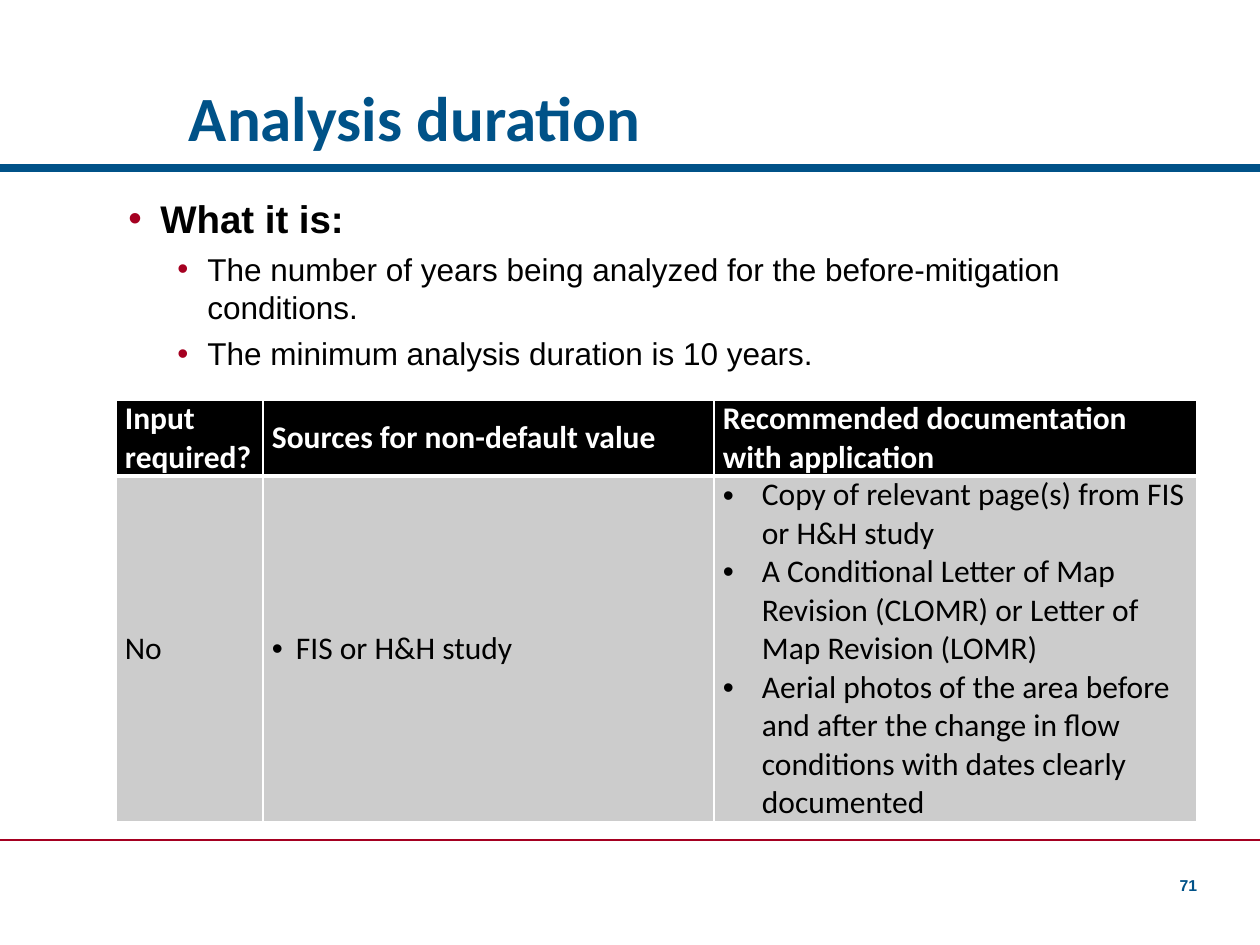
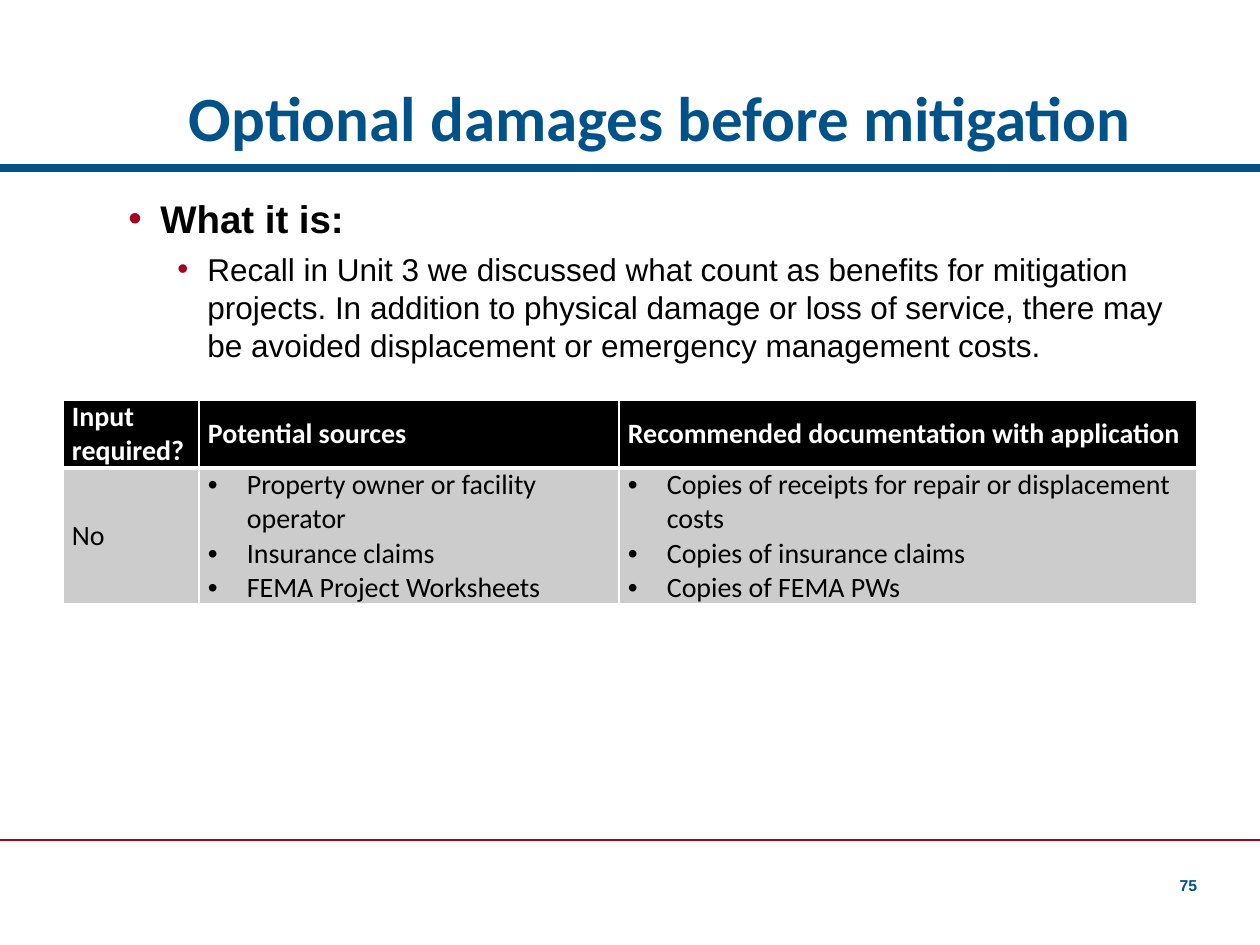
from lxml.etree import SubElement
from pptx import Presentation
from pptx.dml.color import RGBColor
from pptx.enum.shapes import MSO_CONNECTOR
from pptx.enum.text import MSO_ANCHOR, PP_ALIGN
from pptx.oxml.ns import qn
from pptx.util import Emu, Pt

PIXELS_PER_INCH = 126
SLIDE_WIDTH, SLIDE_HEIGHT = 1260, 945
BLUE, RED, BLACK, WHITE, GREY = "005288", "A50021", "000000", "FFFFFF", "CCCCCC"
HEADING_FONT, BODY_FONT = "Calibri", "Arial"
TITLE_BOX = (189, 0, 1008, 161)
BODY_BOX = (116, 189, 1081, 598)
NUMBER_BOX = (1155, 869, 42, 32)
TABLE_TOP = 400
WIDE_INDENT, NARROW_INDENT = 39, 24

SLIDES = [
    {
        "title": "Analysis duration",
        "number": "71",
        "points": [
            "The number of years being analyzed for the before-mitigation conditions.",
            "The minimum analysis duration is 10 years.",
        ],
        "left": 116,
        "columns": [147, 451, 483],
        "rows": [76, 346],
        "size": 18,
        "headers": [
            "Input required?",
            "Sources for non-default value",
            "Recommended documentation with application",
        ],
        "sources": ["FIS or H&H study"],
        "source_indent": NARROW_INDENT,
        "documents": [
            "Copy of relevant page(s) from FIS or H&H study",
            "A Conditional Letter of Map Revision (CLOMR) or Letter of Map Revision (LOMR)",
            "Aerial photos of the area before and after the change in flow conditions "
            "with dates clearly documented",
        ],
    },
    {
        "title": "Optional damages before mitigation",
        "number": "75",
        "points": [
            "Recall in Unit 3 we discussed what count as benefits for mitigation projects. "
            "In addition to physical damage or loss of service, there may be avoided "
            "displacement or emergency management costs.",
        ],
        "left": 63,
        "columns": [136, 420, 578],
        "rows": [68, 136],
        "size": 16,
        "headers": [
            "Input required?",
            "Potential sources",
            "Recommended documentation with application",
        ],
        "sources": [
            "Property owner or facility operator",
            "Insurance claims",
            "FEMA Project Worksheets",
        ],
        "source_indent": WIDE_INDENT,
        "documents": [
            "Copies of receipts for repair or displacement costs",
            "Copies of insurance claims",
            "Copies of FEMA PWs",
        ],
    },
]


def px(length):
    return Emu(round(length * 914400 / PIXELS_PER_INCH))


def color(value):
    return RGBColor.from_string(value)


def format_runs(paragraph, font_name, size, font_color, bold=False):
    for run in paragraph.runs:
        run.font.name = font_name
        run.font.size = Pt(size)
        run.font.bold = bold
        run.font.color.rgb = color(font_color)


def add_bullet(paragraph, margin, hanging, bullet_color):
    properties = paragraph._p.get_or_add_pPr()
    properties.set("marL", str(px(margin)))
    properties.set("indent", str(px(-hanging)))
    bullet = SubElement(properties, qn("a:buClr"))
    SubElement(bullet, qn("a:srgbClr"), val=bullet_color)
    SubElement(properties, qn("a:buFont"), typeface=BODY_FONT)
    SubElement(properties, qn("a:buChar"), char="•")


def add_rule(slide, top, line_color, weight):
    rule = slide.shapes.add_connector(
        MSO_CONNECTOR.STRAIGHT, 0, px(top), px(SLIDE_WIDTH), px(top)
    )
    rule.line.color.rgb = color(line_color)
    rule.line.width = Pt(weight)
    SubElement(rule._element.spPr, qn("a:effectLst"))


def add_text_box(slide, box, anchor):
    text_frame = slide.shapes.add_textbox(*map(px, box)).text_frame
    text_frame.word_wrap = True
    text_frame.vertical_anchor = anchor
    return text_frame


def add_title(slide, box, text):
    text_frame = add_text_box(slide, box, MSO_ANCHOR.BOTTOM)
    text_frame.margin_left = 0
    text_frame.text = text
    paragraph = text_frame.paragraphs[0]
    paragraph.line_spacing = 0.9
    format_runs(paragraph, HEADING_FONT, 36, BLUE, True)


def add_page_number(slide, box, number):
    text_frame = add_text_box(slide, box, MSO_ANCHOR.BOTTOM)
    text_frame.margin_left = text_frame.margin_right = 0
    text_frame.text = number
    paragraph = text_frame.paragraphs[0]
    paragraph.alignment = PP_ALIGN.RIGHT
    format_runs(paragraph, BODY_FONT, 9, BLUE, True)


def add_points(slide, box, points):
    text_frame = add_text_box(slide, box, MSO_ANCHOR.TOP)
    text_frame.text = "\n".join(["What it is:", *points])
    heading, *details = text_frame.paragraphs
    add_bullet(heading, 32, 32, RED)
    format_runs(heading, BODY_FONT, 22, BLACK, True)
    for paragraph in details:
        paragraph.level = 1
        add_bullet(paragraph, 79, 30, RED)
        paragraph.space_before = Pt(5)
        format_runs(paragraph, BODY_FONT, 18, BLACK)


def add_borders(cell, top, bottom):
    properties = cell._tc.get_or_add_tcPr()
    for side, weight in (("L", 1), ("R", 1), ("T", top), ("B", bottom)):
        border = SubElement(properties, qn(f"a:ln{side}"), w=str(Pt(weight)))
        fill = SubElement(border, qn("a:solidFill"))
        SubElement(fill, qn("a:srgbClr"), val=WHITE)


def fill_cell(cell, lines, size, is_header, indent):
    add_borders(cell, *((1, 3) if is_header else (3, 1)))
    cell.fill.solid()
    cell.fill.fore_color.rgb = color(BLACK if is_header else GREY)
    cell.margin_left = cell.margin_right = px(9)
    cell.margin_top = cell.margin_bottom = 0
    cell.vertical_anchor = MSO_ANCHOR.MIDDLE
    cell.text_frame.text = "\n".join(lines)
    for paragraph in cell.text_frame.paragraphs:
        if indent:
            add_bullet(paragraph, indent, indent, BLACK)
        format_runs(paragraph, HEADING_FONT, size, WHITE if is_header else BLACK, is_header)


def add_input_table(slide, left, top, content):
    columns, rows = content["columns"], content["rows"]
    box = (left, top, sum(columns), sum(rows))
    table = slide.shapes.add_table(len(rows), len(columns), *map(px, box)).table
    table.horz_banding = False
    for column, width in zip(table.columns, columns):
        column.width = px(width)
    for row, height in zip(table.rows, rows):
        row.height = px(height)
    answers = [["No"], content["sources"], content["documents"]]
    indents = [0, content["source_indent"], WIDE_INDENT]
    for index, header in enumerate(content["headers"]):
        fill_cell(table.cell(0, index), [header], content["size"], True, 0)
        fill_cell(table.cell(1, index), answers[index], content["size"], False, indents[index])


def add_input_slide(presentation, content):
    slide = presentation.slides.add_slide(presentation.slide_layouts[6])
    add_rule(slide, 168, BLUE, 4.5)
    add_rule(slide, 840, RED, 1.5)
    add_title(slide, TITLE_BOX, content["title"])
    add_points(slide, BODY_BOX, content["points"])
    add_input_table(slide, content["left"], TABLE_TOP, content)
    add_page_number(slide, NUMBER_BOX, content["number"])


def main():
    presentation = Presentation()
    presentation.slide_width = px(SLIDE_WIDTH)
    presentation.slide_height = px(SLIDE_HEIGHT)
    for content in SLIDES:
        add_input_slide(presentation, content)
    presentation.save("out.pptx")


if __name__ == "__main__":
    main()
